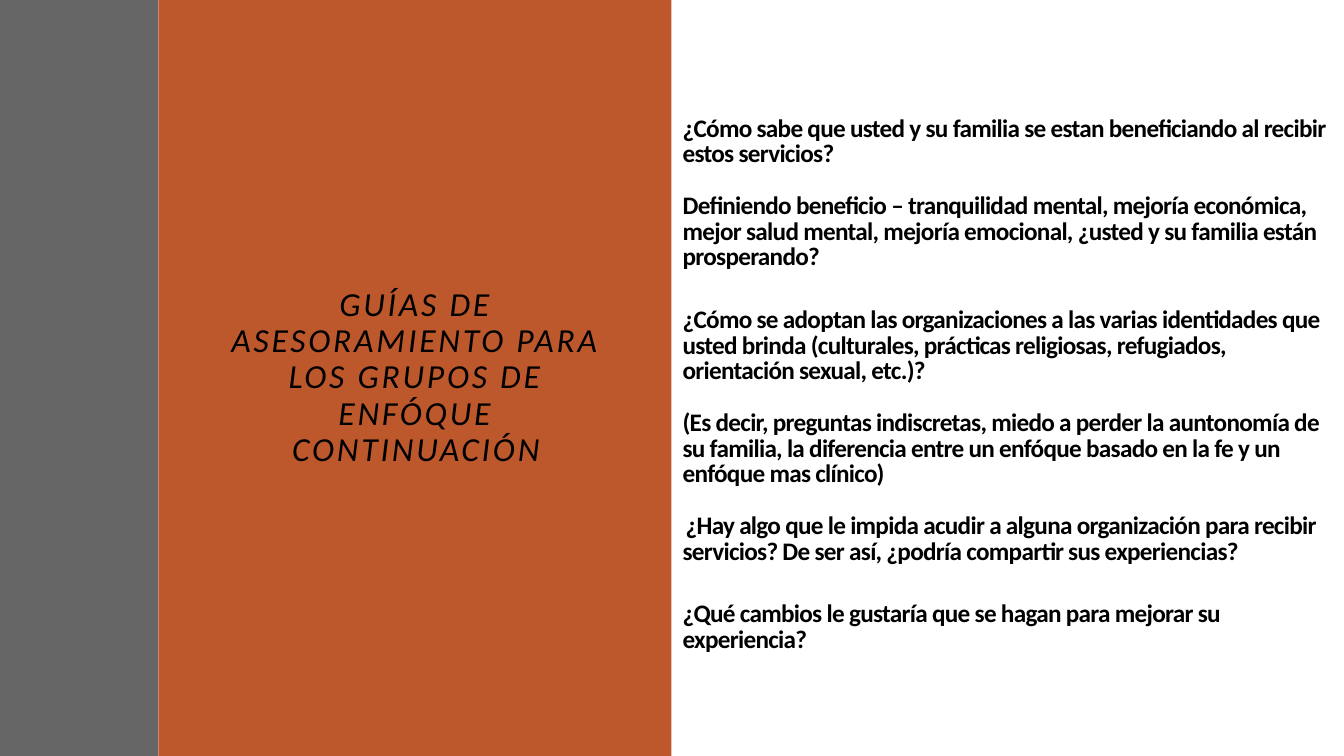
from lxml.etree import SubElement
from pptx import Presentation
from pptx.dml.color import RGBColor
from pptx.enum.shapes import MSO_SHAPE as Shape
from pptx.enum.text import MSO_ANCHOR as Anchor, MSO_AUTO_SIZE as AutoSize, PP_ALIGN as Align
from pptx.oxml.ns import qn
from pptx.util import Inches, Pt

WIDTH, HEIGHT = 13.33, 7.5
GRAY_WIDTH, ORANGE_WIDTH = 1.57, 5.09
TITLE_LEFT, TITLE_TOP = 6.67, 0.14
SHORT_GAP, LONG_GAP = 18.5, 26.3

# Space before (points), first-line indent (inches), text
QUESTIONS = [
    (0, 0, "¿Cómo sabe que usted y su familia se estan beneficiando al recibir estos servicios?"),
    (SHORT_GAP, 0, "Definiendo beneficio – tranquilidad mental, mejoría económica, mejor salud mental, "
                   "mejoría emocional, ¿usted y su familia están prosperando?"),
    (LONG_GAP, 0, "¿Cómo se adoptan las organizaciones a las varias identidades que usted brinda "
                  "(culturales, prácticas religiosas, refugiados, orientación sexual, etc.)?"),
    (SHORT_GAP, 0, "(Es decir, preguntas indiscretas, miedo a perder la auntonomía de su familia, "
                   "la diferencia entre un enfóque basado en la fe y un enfóque mas clínico)"),
    (SHORT_GAP, 0.03, "¿Hay algo que le impida acudir a alguna organización para recibir servicios? "
                      "De ser así, ¿podría compartir sus experiencias?"),
    (LONG_GAP, 0, "¿Qué cambios le gustaría que se hagan para mejorar su experiencia?"),
]


def add_panel(left, width, color):
    panel = page.shapes.add_shape(Shape.RECTANGLE, Inches(left), 0, Inches(width), Inches(HEIGHT))
    panel.shadow.inherit = False
    panel.fill.solid()
    panel.fill.fore_color.rgb = RGBColor.from_string(color)
    panel.line.fill.background()
    return panel


def write(para, text, size, spacing, line_spacing, align=Align.LEFT, before=0, indent=0,
          bold=False, italic=False, color="000000"):
    """Fill a paragraph; size, spacing between letters and space before are in points."""
    para.alignment = align
    para.line_spacing = line_spacing
    para.space_before = Pt(before)
    para._p.get_or_add_pPr().set("indent", str(Inches(indent)))
    span = para.add_run()
    span.text = text
    span.font.name = "Calibri"
    span.font.size = Pt(size)
    span.font.bold = bold
    span.font.italic = italic
    span.font.color.rgb = RGBColor.from_string(color)
    span._r.get_or_add_rPr().set("spc", str(int(spacing * 100)))


deck = Presentation()
deck.slide_width, deck.slide_height = Inches(WIDTH), Inches(HEIGHT)
page = deck.slides.add_slide(deck.slide_layouts[5])
title = page.shapes.title

# White ground, moved behind the title, and side panels
ground = add_panel(0, WIDTH, "FFFFFF")
title._element.addprevious(ground._element)
gray = add_panel(0, GRAY_WIDTH, "404040")
gray_color = gray._element.spPr.find(qn("a:solidFill"))[0]
SubElement(gray_color, qn("a:alpha")).set("val", "80000")
add_panel(GRAY_WIDTH, ORANGE_WIDTH, "BD582C")

# Questions
title.left, title.top = Inches(TITLE_LEFT), Inches(TITLE_TOP)
title.width, title.height = Inches(WIDTH - TITLE_LEFT), Inches(HEIGHT - TITLE_TOP)
frame = title.text_frame
frame.word_wrap = True
frame.auto_size = AutoSize.NONE
frame.vertical_anchor = Anchor.MIDDLE
for number, (gap, indent, question) in enumerate(QUESTIONS):
    para = frame.add_paragraph() if number else frame.paragraphs[0]
    write(para, question, 18, -0.5, 0.85, before=gap, indent=indent, bold=True)

# Heading on the orange panel
heading = page.shapes.add_textbox(Inches(2.1), Inches(1.08), Inches(4.05), Inches(5.34))
heading.text_frame.word_wrap = True
heading.text_frame.vertical_anchor = Anchor.MIDDLE
write(heading.text_frame.paragraphs[0],
      "GUÍAS DE ASESORAMIENTO PARA LOS GRUPOS DE ENFÓQUE CONTINUACIÓN",
      24, 2, 0.9, align=Align.CENTER, italic=True)

deck.save("out.pptx")
